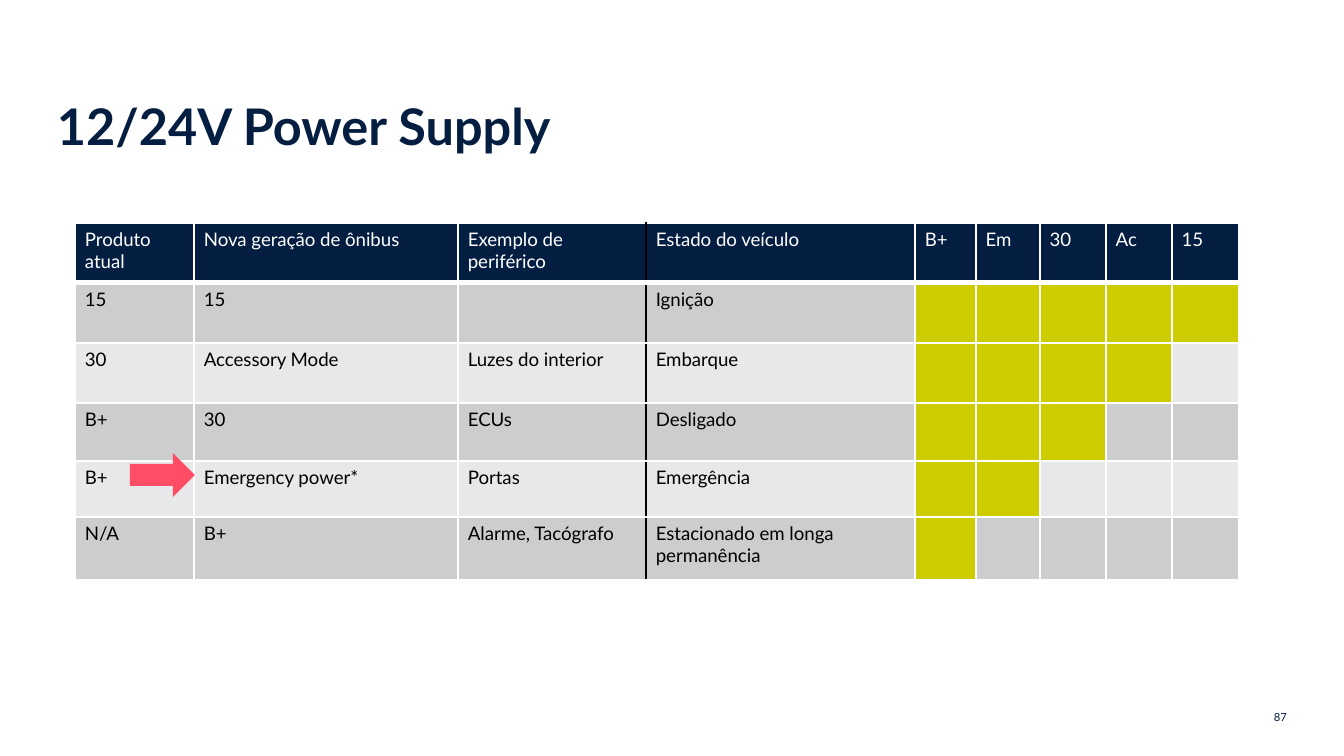
"""Build the 12/24V power supply slide with its vehicle state table."""
import pptx
import pptx.util
import pptx.dml.color
import pptx.enum.shapes
import pptx.enum.text
import lxml.etree

RGB = pptx.dml.color.RGBColor
NAVY = RGB(0x04, 0x1E, 0x42)
WHITE = RGB(0xFF, 0xFF, 0xFF)
BLACK = RGB(0, 0, 0)
DARK = RGB(0xCC, 0xCD, 0xCF)
LIGHT = RGB(0xE7, 0xE8, 0xE9)
LIME = RGB(0xCC, 0xCC, 0x00)
CORAL = RGB(0xFF, 0x4D, 0x65)

ALIGN = pptx.enum.text.PP_ALIGN
ANCHOR = pptx.enum.text.MSO_ANCHOR
NS = "http://schemas.openxmlformats.org/drawingml/2006/main"
SCALE = 914400 / 134.4

TITLE = "12/24V Power Supply"
PAGE = "87"
HEAD = ["Produto atual", "Nova geração de ônibus", "Exemplo de periférico",
        "Estado do veículo", "B+", "Em", "30", "Ac", "15"]
STATES = [
    (["15", "15", "", "Ignição"], 5),
    (["30", "Accessory Mode", "Luzes do interior", "Embarque"], 4),
    (["B+", "30", "ECUs", "Desligado"], 3),
    (["B+", "Emergency power*", "Portas", "Emergência"], 2),
    (["N/A", "B+", "Alarme, Tacógrafo", "Estacionado em longa permanência"], 1),
]
COLS = [119, 264, 188, 269, 61, 64, 66, 66, 67]
ROWS = [60, 60, 60, 58, 56, 63]
LABELS = 4
SPLIT = 3


def px(num):
    return pptx.util.Emu(round(num * SCALE))


def box(*nums):
    return [px(num) for num in nums]


def put(item, **vals):
    for name, val in vals.items():
        setattr(item, name, val)


def write(para, text, size, color, bold=False):
    run = para.add_run()
    run.text = text
    put(run.font, name="Lato", size=pptx.util.Pt(size), bold=bold)
    run.font.color.rgb = color


def place(shape, area, anchor):
    put(shape, **dict(zip(("left", "top", "width", "height"), box(*area))))
    put(shape.text_frame, margin_left=0, margin_top=0, margin_right=0,
        margin_bottom=0, word_wrap=True, vertical_anchor=anchor,
        auto_size=pptx.enum.text.MSO_AUTO_SIZE.NONE)
    return shape.text_frame.paragraphs[0]


def edge(cell, side, color, width):
    props = cell._tc.get_or_add_tcPr()
    line = lxml.etree.SubElement(props, f"{{{NS}}}ln{side}",
                                 w=str(pptx.util.Pt(width)))
    fill = lxml.etree.SubElement(line, f"{{{NS}}}solidFill")
    lxml.etree.SubElement(fill, f"{{{NS}}}srgbClr", val=str(color))


def fill_cell(cell, row, col, text, lit):
    edge(cell, "L", BLACK if col == SPLIT else WHITE, 1)
    edge(cell, "R", BLACK if col == SPLIT - 1 else WHITE, 1)
    edge(cell, "T", WHITE, 1)
    edge(cell, "B", WHITE, 1 if row else 3)
    put(cell, margin_left=px(10), margin_right=px(10),
        margin_top=px(5), margin_bottom=px(5))
    band = DARK if row % 2 else LIGHT
    cell.fill.solid()
    cell.fill.fore_color.rgb = LIME if lit else band if row else NAVY
    if text:
        write(cell.text_frame.paragraphs[0], text, 10, BLACK if row else WHITE)


def add_grid(slide):
    area = box(75, 223, sum(COLS), sum(ROWS))
    grid = slide.shapes.add_table(len(ROWS), len(COLS), *area).table
    for col, width in zip(grid.columns, COLS):
        col.width = px(width)
    for row, height in zip(grid.rows, ROWS):
        row.height = px(height)
    for row, (texts, count) in enumerate([(HEAD, 0)] + STATES):
        for col in range(len(COLS)):
            text = texts[col] if col < len(texts) else ""
            lit = LABELS <= col < LABELS + count
            fill_cell(grid.cell(row, col), row, col, text, lit)


def main():
    deck = pptx.Presentation()
    put(deck, slide_width=px(1344), slide_height=px(756))
    slide = deck.slides.add_slide(deck.slide_layouts[5])

    para = place(slide.shapes.title, (57, 40, 1167, 116), ANCHOR.BOTTOM)
    put(para, alignment=ALIGN.LEFT, line_spacing=0.9)
    write(para, TITLE, 27, NAVY, True)

    area = (1231, 705, 56, 24)
    para = place(slide.shapes.add_textbox(*box(*area)), area, ANCHOR.MIDDLE)
    para.alignment = ALIGN.RIGHT
    write(para, PAGE, 6, NAVY)

    add_grid(slide)

    kind = pptx.enum.shapes.MSO_SHAPE.RIGHT_ARROW
    arrow = slide.shapes.add_shape(kind, *box(130, 453, 65, 44))
    arrow.shadow.inherit = False
    arrow.fill.solid()
    arrow.fill.fore_color.rgb = CORAL
    arrow.line.fill.background()
    deck.save("out.pptx")


if __name__ == "__main__":
    main()
